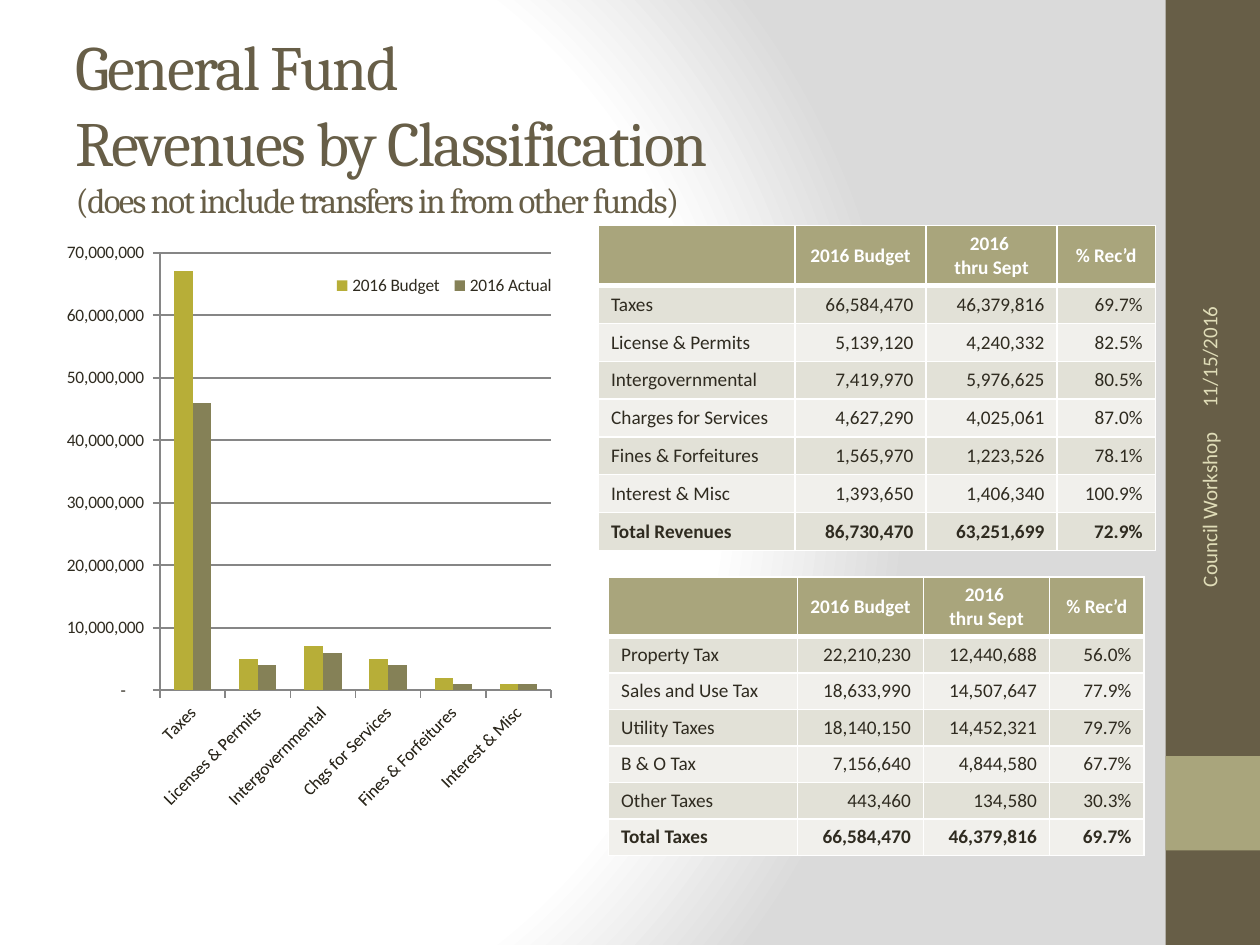
from copy import deepcopy
from dataclasses import dataclass

from pptx import Presentation
from pptx.chart.data import CategoryChartData
from pptx.dml.color import RGBColor
from pptx.enum.chart import XL_CHART_TYPE, XL_LEGEND_POSITION, XL_TICK_MARK
from pptx.enum.shapes import MSO_SHAPE
from pptx.enum.text import MSO_ANCHOR, MSO_AUTO_SIZE, PP_ALIGN
from pptx.oxml import parse_xml
from pptx.oxml.ns import nsdecls, qn
from pptx.util import Inches, Pt

LEFT, CENTER, RIGHT = PP_ALIGN.LEFT, PP_ALIGN.CENTER, PP_ALIGN.RIGHT
MIDDLE = MSO_ANCHOR.MIDDLE
NO_FIT = MSO_AUTO_SIZE.NONE
RECT = MSO_SHAPE.RECTANGLE
COLUMN = XL_CHART_TYPE.COLUMN_CLUSTERED
BOTTOM = XL_LEGEND_POSITION.BOTTOM
OUTSIDE = XL_TICK_MARK.OUTSIDE

COUNTS = '_(* #,##0_);_(* \\(#,##0\\);_(* "-"??_);_('
HEADS = ["", "2016 Budget", "2016 \nthru Sept", "% Rec’d"]
FUNDS = [
    ("Taxes", 66584470, 46379816, "69.7%"),
    ("License & Permits", 5139120, 4240332, "82.5%"),
    ("Intergovernmental", 7419970, 5976625, "80.5%"),
    ("Charges for Services", 4627290, 4025061, "87.0%"),
    ("Fines & Forfeitures", 1565970, 1223526, "78.1%"),
    ("Interest & Misc", 1393650, 1406340, "100.9%"),
    ("Total Revenues", 86730470, 63251699, "72.9%"),
]
TAXES = [
    ("Property Tax", 22210230, 12440688, "56.0%"),
    ("Sales and Use Tax", 18633990, 14507647, "77.9%"),
    ("Utility Taxes", 18140150, 14452321, "79.7%"),
    ("B & O Tax", 7156640, 4844580, "67.7%"),
    ("Other Taxes", 443460, 134580, "30.3%"),
    ("Total Taxes", 66584470, 46379816, "69.7%"),
]
LABELS = ["Taxes", "Licenses & Permits", "Intergovernmental",
          "Chgs for Services", "Fines & Forfeitures", "Interest & Misc"]


@dataclass
class Theme:
    head: str = "Cambria"
    body: str = "Calibri"
    dark: str = "675E47"
    sage: str = "A9A57C"
    ink: str = "2F2B20"
    cream: str = "DFDCB7"
    white: str = "FFFFFF"
    shade: str = "DADADA"
    grid: str = "868686"
    bands: tuple = ("E2E1D7", "F1F0EC")
    bars: tuple = ("B7AE38", "858157")
    title: int = 36
    note: int = 20
    side: int = 12
    cell: int = 11
    chart: int = 10


def write(frame, text, font, size, color, bold=False, align=LEFT, space=0):
    frame.text = text
    frame.word_wrap = True
    frame.vertical_anchor = MIDDLE
    for par in frame.paragraphs:
        par.alignment = align
        for run in par.runs:
            run.font.name = font
            run.font.size = Pt(size)
            run.font.bold = bold
            run.font.color.rgb = RGBColor.from_string(color)
            if space:
                run.font._element.set("spc", str(space))
        for gap in par._p.findall(qn("a:br")):
            gap.insert(0, deepcopy(par.runs[0].font._element))


def place(node, *shares):
    old = node.find(qn("c:layout"))
    if old is not None:
        node.remove(old)
    inner = '<c:layoutTarget val="inner"/>' if node.tag == qn("c:plotArea") else ""
    modes = '<c:xMode val="edge"/><c:yMode val="edge"/>'
    spots = "".join(f'<c:{key} val="{share / 100:.3f}"/>'
                    for key, share in zip("xywh", shares))
    return parse_xml(f'<c:layout {nsdecls("c")}><c:manualLayout>{inner}{modes}{spots}'
                     '</c:manualLayout></c:layout>')


class Deck:
    def __init__(self, theme):
        self.theme = theme
        self.file = Presentation()
        self.file.slide_width, self.file.slide_height = Inches(10), Inches(7.5)
        self.slide = self.file.slides.add_slide(self.file.slide_layouts[5])
        self.shapes = self.slide.shapes

    def glow(self):
        self.slide.background.fill.solid()
        back = self.slide._element.cSld.bg.bgPr
        stops = "".join(f'<a:gs pos="{spot}000"><a:srgbClr val="{tint}"/></a:gs>'
                        for spot, tint in ((0, self.theme.white), (75, self.theme.white),
                                           (100, self.theme.shade)))
        back.replace(back[0], parse_xml(
            f'<a:gradFill {nsdecls("a")} rotWithShape="1"><a:gsLst>{stops}</a:gsLst>'
            '<a:path path="circle"><a:fillToRect l="20000" t="50000" r="100000" b="50000"/>'
            '</a:path></a:gradFill>'))

    def block(self, x, y, wide, high, color):
        shape = self.shapes.add_shape(RECT, *map(Inches, (x, y, wide, high)))
        shape.shadow.inherit = False
        shape.fill.solid()
        shape.fill.fore_color.rgb = RGBColor.from_string(color)
        shape.line.fill.background()

    def title(self, text, x, y, wide, high):
        shape = self.shapes.title
        shape.left, shape.top, shape.width, shape.height = map(Inches, (x, y, wide, high))
        frame = shape.text_frame
        write(frame, text, self.theme.head, self.theme.title, self.theme.dark, space=-100)
        frame.auto_size = NO_FIT
        frame.paragraphs[0].runs[-1].font.size = Pt(self.theme.note)

    def side(self, text, x, y, wide, high, align):
        box = self.shapes.add_textbox(*map(Inches, (x, y, wide, high)))
        box.rotation = 270
        write(box.text_frame, text, self.theme.body, self.theme.side, self.theme.cream,
              align=align)

    def edge(self, cell, top, base):
        props = cell._tc.get_or_add_tcPr()
        for spot, (side, width) in enumerate((("L", 1), ("R", 1), ("T", top), ("B", base))):
            props.insert(spot, parse_xml(
                f'<a:ln{side} {nsdecls("a")} w="{Pt(width)}"><a:solidFill>'
                f'<a:srgbClr val="{self.theme.white}"/></a:solidFill></a:ln{side}>'))

    def table(self, rows, x, y, widths, high):
        theme = self.theme
        first = 0.47
        size = (sum(widths), first + high * len(rows))
        grid = self.shapes.add_table(len(rows) + 1, len(widths),
                                     *map(Inches, (x, y, *size))).table
        for col, width in zip(grid.columns, widths):
            col.width = Inches(width)
        for i, row in enumerate([HEADS, *rows]):
            grid.rows[i].height = Inches(high if i else first)
            for j, value in enumerate(row):
                cell = grid.cell(i, j)
                text = value if isinstance(value, str) else f"{value:,}"
                align = CENTER if i == 0 else RIGHT if j else LEFT
                write(cell.text_frame, text, theme.body, theme.cell,
                      theme.ink if i else theme.white,
                      bold=i in (0, len(rows)), align=align)
                cell.vertical_anchor = MIDDLE
                cell.fill.solid()
                cell.fill.fore_color.rgb = RGBColor.from_string(
                    theme.bands[(i - 1) % 2] if i else theme.sage)
                self.edge(cell, 3 if i == 1 else 1, 1 if i else 3)

    def chart(self, rows, x, y, wide, high):
        theme = self.theme
        data = CategoryChartData(number_format=COUNTS)
        data.categories = LABELS
        for col, name in enumerate(("2016 Budget", "2016 Actual"), 1):
            data.add_series(name, [round(row[col], -6) for row in rows])
        chart = self.shapes.add_chart(COLUMN, *map(Inches, (x, y, wide, high)), data).chart
        chart.has_title = False
        chart.font.name, chart.font.size = theme.body, Pt(theme.chart)
        chart.font.color.rgb = RGBColor.from_string(theme.ink)
        plot = chart.plots[0]
        plot.gap_width, plot.overlap = 150, 0
        plot.vary_by_categories = False
        for part, color in zip(plot.series, theme.bars):
            part.format.fill.solid()
            part.format.fill.fore_color.rgb = RGBColor.from_string(color)
        cats, vals = chart.category_axis, chart.value_axis
        vals.minimum_scale, vals.maximum_scale, vals.major_unit = 0, 70000000, 10000000
        vals.has_major_gridlines = True
        vals.tick_labels.number_format = COUNTS
        vals.tick_labels.number_format_is_linked = False
        for axis in (cats, vals):
            axis.major_tick_mark = OUTSIDE
            axis.tick_labels.font.size = Pt(theme.chart)
        for item in (cats, vals, vals.major_gridlines):
            item.format.line.color.rgb = RGBColor.from_string(theme.grid)
            item.format.line.width = Pt(1)
        cats._element.find(qn("c:txPr")).find(qn("a:bodyPr")).set("rot", "-2700000")
        area = chart._chartSpace.chart.plotArea
        area.insert(0, place(area, 18.7, 3.5, 78.1, 69.2))
        chart.has_legend = True
        chart.legend.position = BOTTOM
        chart.legend.include_in_layout = False
        key = chart.legend._element
        spot = place(key, 52.2, 6.2, 46.6, 5)
        key.find(qn("c:legendPos")).addnext(spot)


def main():
    theme = Theme()
    deck = Deck(theme)
    deck.glow()
    deck.block(9.25, 0, 0.75, 7.5, theme.dark)
    deck.block(9.25, 6, 0.75, 0.75, theme.sage)
    deck.title("General Fund\vRevenues by Classification\v"
               "(does not include transfers in from other funds)", 0.5, 0.3, 8.33, 1.37)
    deck.table(FUNDS, 4.75, 1.79, (1.56, 1.04, 1.04, 0.78), 0.3)
    deck.side("11/15/2016", 8.26, 1.8, 2.67, 0.4, LEFT)
    deck.side("Council Workshop", 8.3, 4.43, 2.59, 0.4, RIGHT)
    deck.table(TAXES, 4.83, 4.58, (1.5, 1, 1, 0.75), 0.29)
    deck.chart(FUNDS[:-1], 0.5, 1.83, 4, 5.02)
    deck.file.save("out.pptx")


if __name__ == "__main__":
    main()
